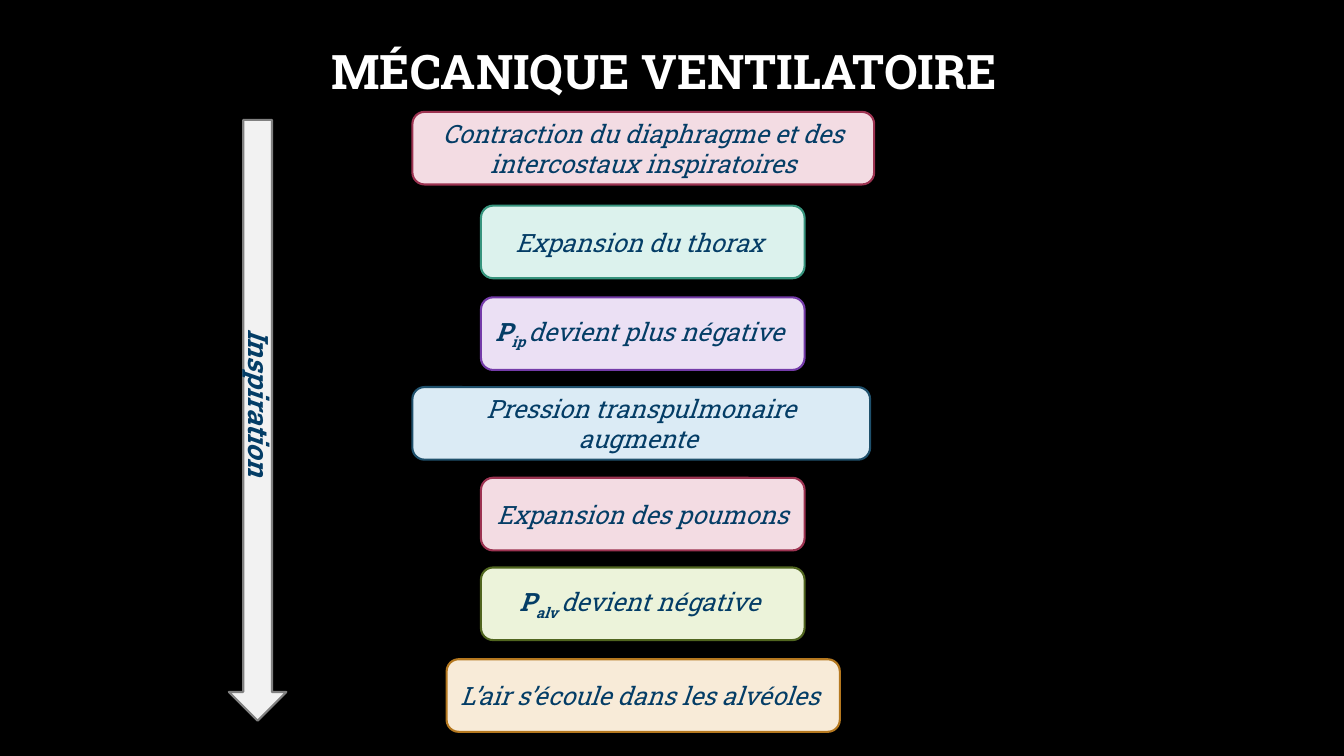
from pptx import Presentation
from pptx import util as u
from pptx.dml.color import RGBColor
from pptx.enum import shapes, text

FONT = "Roboto Slab"
INK = "043D66"


def tint(code):
    return RGBColor.from_string(code)


class Deck:
    """Holds the style and the current slide."""

    def __init__(self):
        self.prs = Presentation()
        self.prs.slide_width = u.Inches(13.33)
        self.prs.slide_height = u.Inches(7.5)
        self.slide = self.prs.slides.add_slide(self.prs.slide_layouts[6])
        back = self.slide.background.fill
        back.solid()
        back.fore_color.rgb = tint("000000")

    def words(self, frame, runs, size, color=INK, bold=False, italic=True):
        """Fill a frame with one centred line of (words, bold, base) runs."""
        frame.word_wrap = True
        para = frame.paragraphs[0]
        para.alignment = text.PP_ALIGN.CENTER
        font = para.font
        font.name, font.size = FONT, u.Pt(size)
        font.bold, font.italic = bold, italic
        font.color.rgb = tint(color)
        for part, heavy, base in runs:
            run = para.add_run()
            run.text = part
            if heavy:
                run.font.bold = True
            if base:
                run.font._element.set("baseline", str(base))
        return para

    def shape(self, kind, at, fill, line):
        item = self.slide.shapes.add_shape(kind, *map(u.Inches, at))
        item.shadow.inherit = False
        item.fill.solid()
        item.fill.fore_color.rgb = tint(fill)
        item.line.color.rgb = tint(line)
        item.line.width = u.Pt(1.5)
        return item

    def step(self, at, fill, line, runs):
        box = self.shape(shapes.MSO_SHAPE.ROUNDED_RECTANGLE, at, fill, line)
        box.text_frame.vertical_anchor = text.MSO_ANCHOR.MIDDLE
        self.words(box.text_frame, runs, 18)

    def label(self, at, part, size, color=INK, italic=True, turn=0):
        box = self.slide.shapes.add_textbox(*map(u.Inches, at))
        box.rotation = turn
        para = self.words(box.text_frame, plain(part), size, color,
                          bold=True, italic=italic)
        return box.text_frame, para


def plain(part):
    return [(part, False, 0)]


def press(site, part):
    """A pressure symbol with its subscript, then plain words."""
    return [("P", True, 0), (site + " ", True, -25000), (part, False, 0)]


# Steps of breathing in: top, (left, width), (fill, line), runs
ROSE = ("F3DCE3", "9C3351")
MID = (4.77, 3.21)
TALL = 0.72
STEPS = [
    (1.11, (4.09, 4.58), ROSE,
     plain("Contraction du diaphragme et des intercostaux inspiratoires")),
    (2.04, MID, ("DCF2ED", "37947D"), plain("Expansion du thorax ")),
    (2.95, MID, ("EBE0F4", "743BA9"), press("ip", "devient plus négative ")),
    (3.84, (4.09, 4.54), ("DBEBF5", "1F506C"),
     plain("Pression transpulmonaire augmente ")),
    (4.74, MID, ROSE, plain("Expansion des poumons ")),
    (5.63, MID, ("ECF3DA", "50651F"), press("alv", "devient négative ")),
    (6.54, (4.43, 3.9), ("F8EBD8", "B5781F"),
     plain("L’air s’écoule dans les alvéoles ")),
]


def main():
    deck = Deck()

    # Title
    frame, para = deck.label((0.93, 0.01, 11.32, 1.45),
                             "MÉCANIQUE VENTILATOIRE", 34, "FFFFFF", False)
    frame.vertical_anchor = text.MSO_ANCHOR.MIDDLE
    para.line_spacing = 0.9

    # Chain of steps
    for top, (left, width), (fill, line), runs in STEPS:
        deck.step((left, top, width, TALL), fill, line, runs)

    # Arrow of time with its label
    deck.shape(shapes.MSO_SHAPE.DOWN_ARROW, (2.27, 1.19, 0.57, 5.96),
               "F2F2F2", "808080")
    deck.label((1.3, 3.81, 2.55, 0.44), "Inspiration ", 20, turn=90)

    deck.prs.save("out.pptx")


if __name__ == "__main__":
    main()
